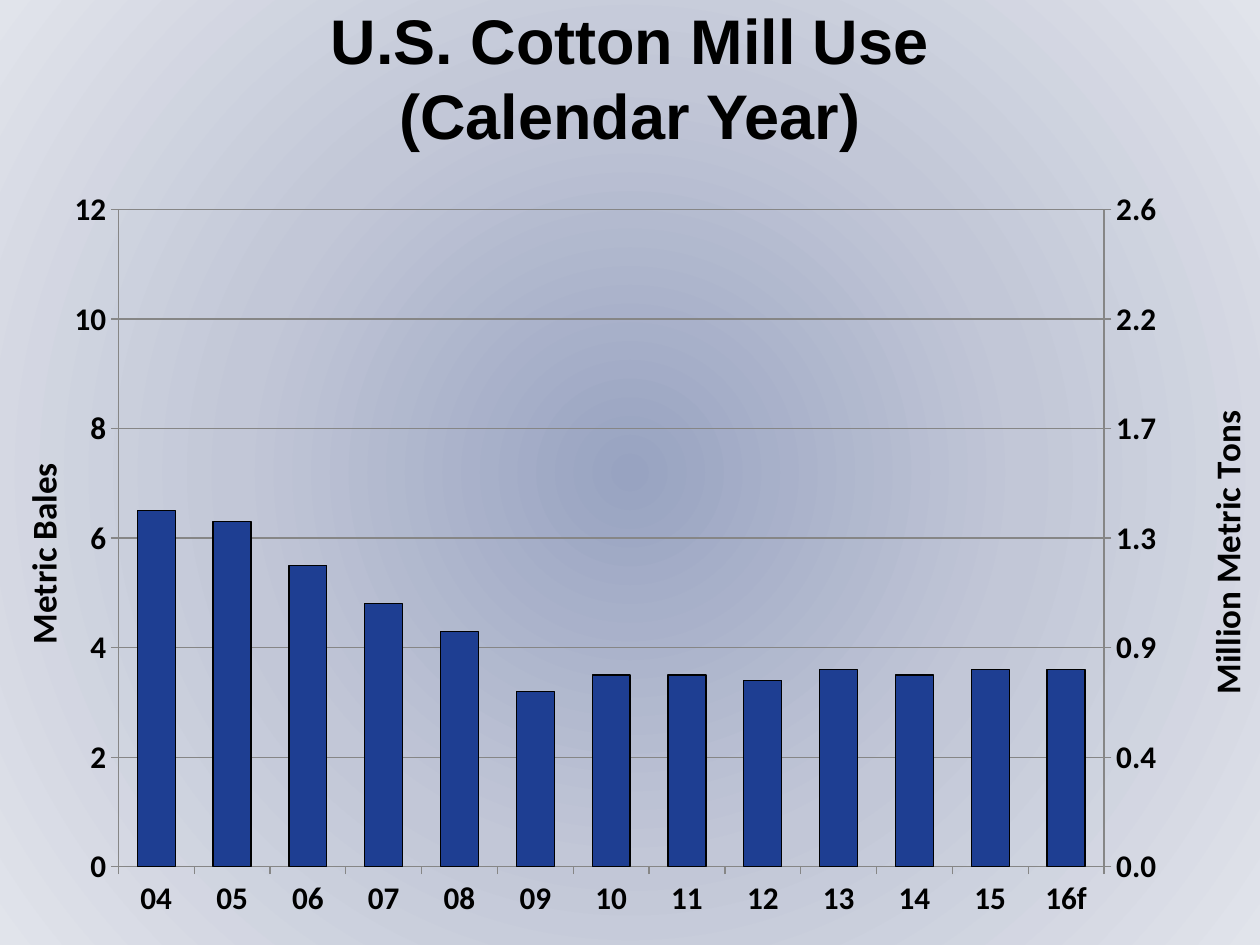
import copy

import lxml.etree
import pptx
import pptx.chart.axis
import pptx.chart.data
import pptx.dml.color
import pptx.enum.chart
import pptx.enum.text
import pptx.oxml
import pptx.oxml.ns
import pptx.util
from pptx.util import Inches

COLORS = {"text": "000000", "bar": "1E3E92", "grid": "868686",
          "center": "98A3C1", "middle": "C2C7D7", "edge": "E1E4EB"}
YEARS = ["04", "05", "06", "07", "08", "09", "10", "11", "12", "13", "14", "15", "16f"]
BALES = [6.5, 6.3, 5.5, 4.8, 4.3, 3.2, 3.5, 3.5, 3.4, 3.6, 3.5, 3.6, 3.6]
TONS = [1.41, 1.38, 1.19, 1.05, 0.95, 0.7, 0.77, 0.75, 0.74, 0.78, 0.77, 0.77, 0.79]
BALES_PER_TON = 4.59
qn = pptx.oxml.ns.qn


def rgb(name):
    return pptx.dml.color.RGBColor.from_string(COLORS[name])


def style_font(font, name, size):
    font.name, font.size, font.bold = name, pptx.util.Pt(size), True
    font.color.rgb = rgb("text")


def add_background(s):
    stops = "".join(f'<a:gs pos="{pos}"><a:srgbClr val="{COLORS[name]}"/></a:gs>'
                    for pos, name in ((0, "center"), (50000, "middle"), (100000, "edge")))
    bg = pptx.oxml.parse_xml(
        f'<p:bg {pptx.oxml.ns.nsdecls("p", "a")}><p:bgPr><a:gradFill><a:gsLst>{stops}</a:gsLst>'
        '<a:path path="circle"><a:fillToRect l="50000" t="50000" r="50000" b="50000"/></a:path>'
        '</a:gradFill><a:effectLst/></p:bgPr></p:bg>')
    s.element.find(qn("p:cSld")).insert(0, bg)


def add_title(s, lines):
    tf = s.shapes.add_textbox(Inches(2.33), Inches(0.33), Inches(5.34), Inches(0.56)).text_frame
    tf.word_wrap = True
    tf.vertical_anchor = pptx.enum.text.MSO_ANCHOR.MIDDLE
    for i, line in enumerate(lines):
        p = tf.add_paragraph() if i else tf.paragraphs[0]
        p.alignment = pptx.enum.text.PP_ALIGN.CENTER
        r = p.add_run()
        r.text = line
        style_font(r.font, "Arial", 36)


def set_layout(parent, index, inner=False, **box):
    """Place a chart part by fractions of the chart's size."""
    old = parent.find(qn("c:layout"))
    if old is not None:
        parent.remove(old)
    layout = lxml.etree.Element(qn("c:layout"))
    manual = lxml.etree.SubElement(layout, qn("c:manualLayout"))
    settings = {"layoutTarget": "inner"} if inner else {}
    settings.update(xMode="edge", yMode="edge", **box)
    for tag, val in settings.items():
        lxml.etree.SubElement(manual, qn("c:" + tag)).set("val", str(val))
    parent.insert(index, layout)


def style_axis(axis):
    axis.major_tick_mark = pptx.enum.chart.XL_TICK_MARK.OUTSIDE
    axis.minor_tick_mark = pptx.enum.chart.XL_TICK_MARK.NONE
    axis.format.line.color.rgb = rgb("grid")
    axis.format.line.width = pptx.util.Pt(0.75)
    style_font(axis.tick_labels.font, "Calibri", 18)


def style_value_axis(axis, title, fmt, top, step, x, y):
    style_axis(axis)
    axis.minimum_scale, axis.maximum_scale, axis.major_unit = 0, top, step
    axis.tick_labels.number_format = fmt
    axis.tick_labels.number_format_is_linked = False
    tf = axis.axis_title.text_frame
    r = tf.paragraphs[0].add_run()
    r.text = title
    style_font(r.font, "Calibri", 20)
    body = tf._txBody.find(qn("a:bodyPr"))
    body.set("rot", "-5400000")
    body.set("vert", "horz")
    set_layout(axis.axis_title._element, 1, x=x, y=y)


def add_right_axis(chart):
    """Move the second series to its own plot and axes; return the value axis."""
    area = chart._chartSpace.chart.plotArea
    left = area.find(qn("c:barChart"))
    right = copy.deepcopy(left)
    left.remove(left.findall(qn("c:ser"))[1])
    right.remove(right.find(qn("c:ser")))
    left.addnext(right)
    cat, val = (copy.deepcopy(area.find(qn(tag))) for tag in ("c:catAx", "c:valAx"))
    for ref, number in zip(right.findall(qn("c:axId")), ("501", "502")):
        ref.set("val", number)
    for ax, own, other in ((cat, "501", "502"), (val, "502", "501")):
        ax.find(qn("c:axId")).set("val", own)
        ax.find(qn("c:crossAx")).set("val", other)
    cat.find(qn("c:delete")).set("val", "1")
    val.find(qn("c:axPos")).set("val", "r")
    val.find(qn("c:crosses")).set("val", "max")
    area.find(qn("c:valAx")).addnext(val)
    val.addnext(cat)
    axis = pptx.chart.axis.ValueAxis(val)
    axis.has_major_gridlines = False
    return axis


def add_cotton_chart(s):
    data = pptx.chart.data.CategoryChartData()
    data.categories = YEARS
    data.add_series("Series 1", BALES)
    data.add_series("Series 2", TONS)
    chart = s.shapes.add_chart(pptx.enum.chart.XL_CHART_TYPE.COLUMN_STACKED, Inches(0),
                               Inches(1.42), Inches(10), Inches(6.08), data).chart
    chart.has_legend = chart.has_title = False
    style_font(chart.font, "Calibri", 18)
    plot = chart.plots[0]
    plot.gap_width, plot.overlap, plot.vary_by_categories = 100, 100, False

    # Visible bars, and unfilled ones that carry the right scale
    bales, tons = plot.series
    bales.format.fill.solid()
    bales.format.fill.fore_color.rgb = rgb("bar")
    bales.format.line.color.rgb = rgb("text")
    bales.format.line.width = pptx.util.Pt(0.75)
    tons.format.fill.background()
    tons.format.line.fill.background()

    # Axes: take the left one before a second value axis exists
    left_axis = chart.value_axis
    right_axis = add_right_axis(chart)
    style_axis(chart.category_axis)
    chart.category_axis.tick_label_position = pptx.enum.chart.XL_TICK_LABEL_POSITION.LOW
    style_value_axis(left_axis, "Metric Bales", "0", 12, 2, 0.01, 0.36)
    style_value_axis(right_axis, "Million Metric Tons", "#,##0.0",
                     12 / BALES_PER_TON, 2 / BALES_PER_TON, 0.96, 0.29)
    grid = left_axis.major_gridlines.format.line
    grid.color.rgb = rgb("grid")
    grid.width = pptx.util.Pt(0.75)
    set_layout(chart._chartSpace.chart.plotArea, 0, inner=True,
               wMode="factor", hMode="factor", x=0.095, y=0.04, w=0.791, h=0.858)


def main():
    prs = pptx.Presentation()
    prs.slide_width, prs.slide_height = Inches(10), Inches(7.5)
    s = prs.slides.add_slide(prs.slide_layouts[6])
    add_background(s)
    add_title(s, ["U.S. Cotton Mill Use", "(Calendar Year)"])
    add_cotton_chart(s)
    prs.save("out.pptx")


if __name__ == "__main__":
    main()
